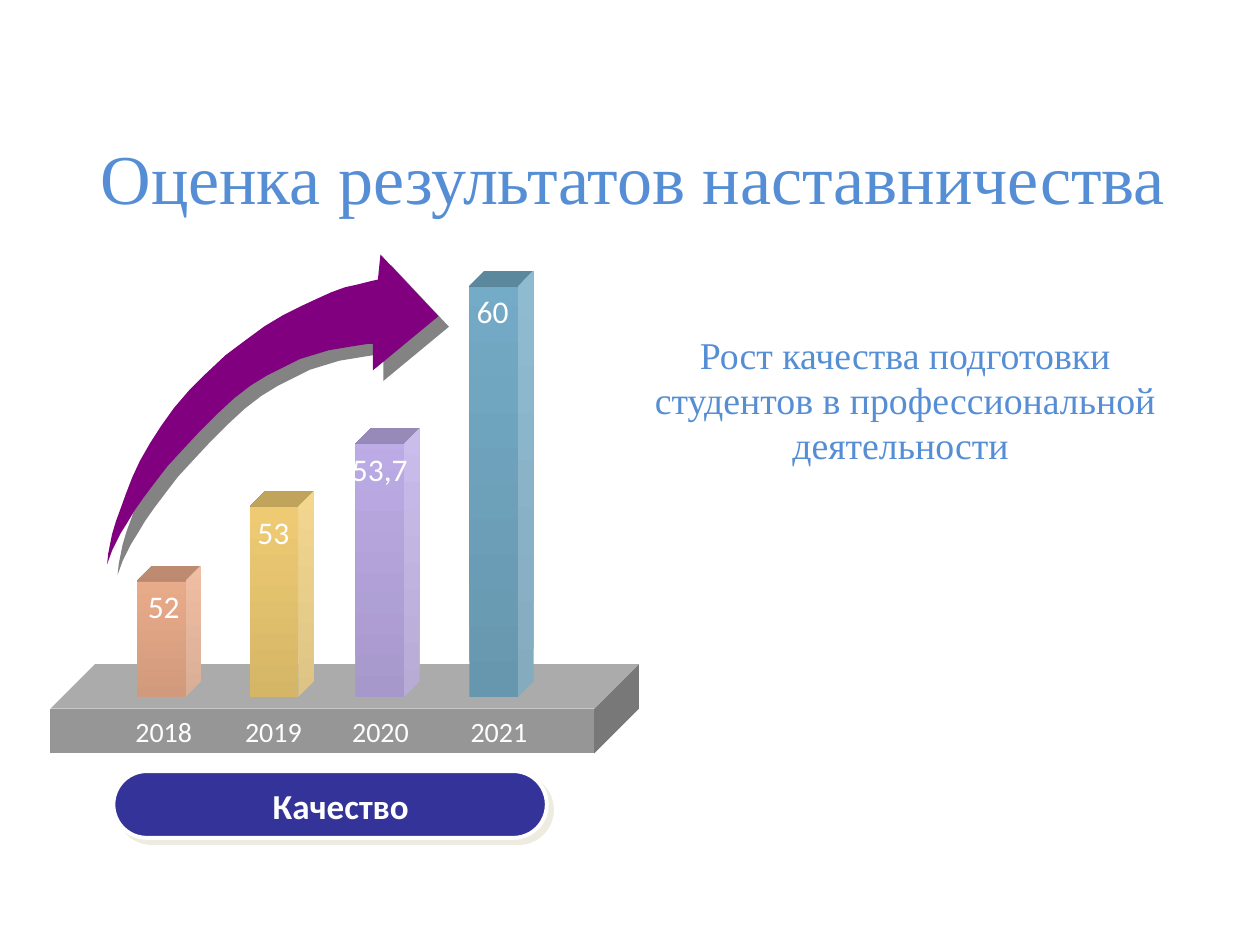
from lxml.etree import SubElement
from pptx import Presentation
from pptx.dml.color import RGBColor
from pptx.enum.shapes import MSO_SHAPE as Shape
from pptx.enum.text import MSO_ANCHOR as Anchor, MSO_AUTO_SIZE as AutoSize, PP_ALIGN as Align
from pptx.oxml.ns import qn
from pptx.util import Inches, Pt

COLUMNS, ROWS = 100, 75
WHITE, BLUE = "FEFEFE", "558ED5"
SERIF = "Times New Roman"

BASE_LINE, BAR_WIDTH = 55.3, 5.1
# year, value, bar center, bar height, year center, value center, dark, light
BARS = [
    ("2018", "52", 13.4, 10.4, 13, 13, "D19A7C", "ECAE8C"),
    ("2019", "53", 22.35, 16.3, 21.7, 21.7, "D5B667", "F0CD74"),
    ("2020", "53,7", 30.75, 21.3, 30.2, 30.15, "A798CC", "BDACE6"),
    ("2021", "60", 39.8, 33.8, 39.6, 39.1, "6797AF", "74ABC6"),
]

ARROW_HEAD = [(30, 22.2), (30.2, 20.2), (34.8, 25.1), (29.6, 29.4), (29.6, 27.3)]
ARROW_INNER = [
    (29.2, 27.3), (27.9, 27.5), (26.1, 27.8), (23.8, 28.5), (22.6, 29.1), (21.2, 29.8),
    (19.9, 30.6), (18.6, 31.6), (17.3, 32.8), (15.8, 34.3), (14.5, 35.7), (13.3, 37),
    (12.3, 38.3), (11.4, 39.5), (10.7, 40.5), (10.1, 41.5), (9.6, 42.3), (8.9, 43.7),
    (8.5, 44.8),
]
ARROW_OUTER = [
    (8.6, 43.9), (8.9, 42.4), (9.2, 41.4), (9.6, 40.3), (10, 39.2), (10.5, 37.9),
    (11.1, 36.6), (11.9, 35.2), (12.8, 33.8), (13.8, 32.4), (15, 31), (16.3, 29.7),
    (17.9, 28.2), (19.5, 27), (21, 25.9), (22.5, 25), (23.9, 24.3), (25.2, 23.7),
    (26.3, 23.2), (27.4, 22.8), (28.3, 22.6), (29.5, 22.3),
]


def color(value):
    return RGBColor.from_string(value)


def write(frame, text, size=16, font="Calibri", fill=WHITE, bold=False, align=Align.CENTER):
    paragraph = frame.paragraphs[0]
    paragraph.alignment = align
    run = paragraph.add_run()
    run.text = text
    run.font.size, run.font.name, run.font.bold = Pt(size), font, bold
    run.font.color.rgb = color(fill)


class Board:
    def __init__(self, presentation):
        self.slide = presentation.slides.add_slide(presentation.slide_layouts[6])
        self.column = presentation.slide_width / COLUMNS
        self.row = presentation.slide_height / ROWS

    def place(self, left, top, width, height):
        return [round(length * unit) for length, unit in
                zip((left, top, width, height), (self.column, self.row) * 2)]

    def text(self, text, box, wrap=True, anchor=Anchor.TOP, **style):
        frame = self.slide.shapes.add_textbox(*self.place(*box)).text_frame
        frame.word_wrap, frame.vertical_anchor = wrap, anchor
        frame.auto_size = AutoSize.NONE
        write(frame, text, **style)

    def label(self, text, center, middle, **style):
        self.text(text, (center - 3.3, middle - 2, 6.6, 4), wrap=False,
                  anchor=Anchor.MIDDLE, **style)

    def preset(self, kind, box, adjustment, fill=None):
        shape = self.slide.shapes.add_shape(kind, *self.place(*box))
        shape.adjustments[0] = adjustment
        shape.shadow.inherit = False
        shape.line.fill.background()
        if fill:
            shape.fill.solid()
            shape.fill.fore_color.rgb = color(fill)
        return shape

    def bar(self, center, height, dark, light):
        box = (center - height / 2, BASE_LINE - height / 2 - BAR_WIDTH / 2, height, BAR_WIDTH)
        shape = self.preset(Shape.CUBE, box, 0.24)
        shape.rotation = 270
        shape._element.spPr.find(qn("a:xfrm")).set("flipV", "1")
        shape.fill.gradient()
        shape.fill.gradient_angle = 0
        for stop, value, position in zip(shape.fill.gradient_stops, (dark, light), (0, 1)):
            stop.color.rgb, stop.position = color(value), position

    def outline(self, points, fill):
        start, *rest = [(x * self.column, y * self.row) for x, y in points]
        builder = self.slide.shapes.build_freeform(*start)
        builder.add_line_segments(rest, close=True)
        shape = builder.convert_to_shape()
        shape.shadow.inherit = False
        shape.fill.solid()
        shape.fill.fore_color.rgb = color(fill)
        shape.line.fill.background()
        return shape

    def shadow(self, shape, value, distance, opacity):
        effects = shape._element.spPr.find(qn("a:effectLst"))
        outer = SubElement(effects, qn("a:outerShdw"), dist=str(Pt(distance)),
                           dir="2700000", algn="ctr", rotWithShape="0")
        tint = SubElement(outer, qn("a:srgbClr"), val=value)
        SubElement(tint, qn("a:alpha"), val=str(opacity * 1000))


def main():
    presentation = Presentation()
    presentation.slide_width, presentation.slide_height = Inches(10), Inches(7.5)
    board = Board(presentation)

    board.text("Рост качества подготовки студентов в профессиональной деятельности ",
               (49.2, 25, 45.3, 13.4), anchor=Anchor.MIDDLE, size=21.6, font=SERIF, fill=BLUE)

    button = board.preset(Shape.ROUNDED_RECTANGLE, (9, 61.2, 34.4, 5.3), 0.5, "333399")
    button.line.color.rgb, button.line.width = color(WHITE), Pt(2.25)
    board.shadow(button, "EEECE1", 4.2, 100)
    board.label("Качество", 27.05, 63.9, size=20, bold=True)

    arrow = board.outline(ARROW_HEAD + ARROW_INNER + ARROW_OUTER, "800080")
    board.shadow(arrow, "080808", 8.5, 50)

    board.preset(Shape.CUBE, (4, 52.7, 46.7, 7.1), 0.5, "969696")
    for year, value, center, height, year_center, value_center, dark, light in BARS:
        board.bar(center, height, dark, light)
        board.label(year, year_center, 58.05)
        board.label(value, value_center, BASE_LINE - height + 3.2, size=18)

    board.text("Оценка результатов наставничества", (7, 10.2, 93, 7.7),
               size=40, font=SERIF, fill=BLUE, align=Align.LEFT)
    presentation.save("out.pptx")


if __name__ == "__main__":
    main()
